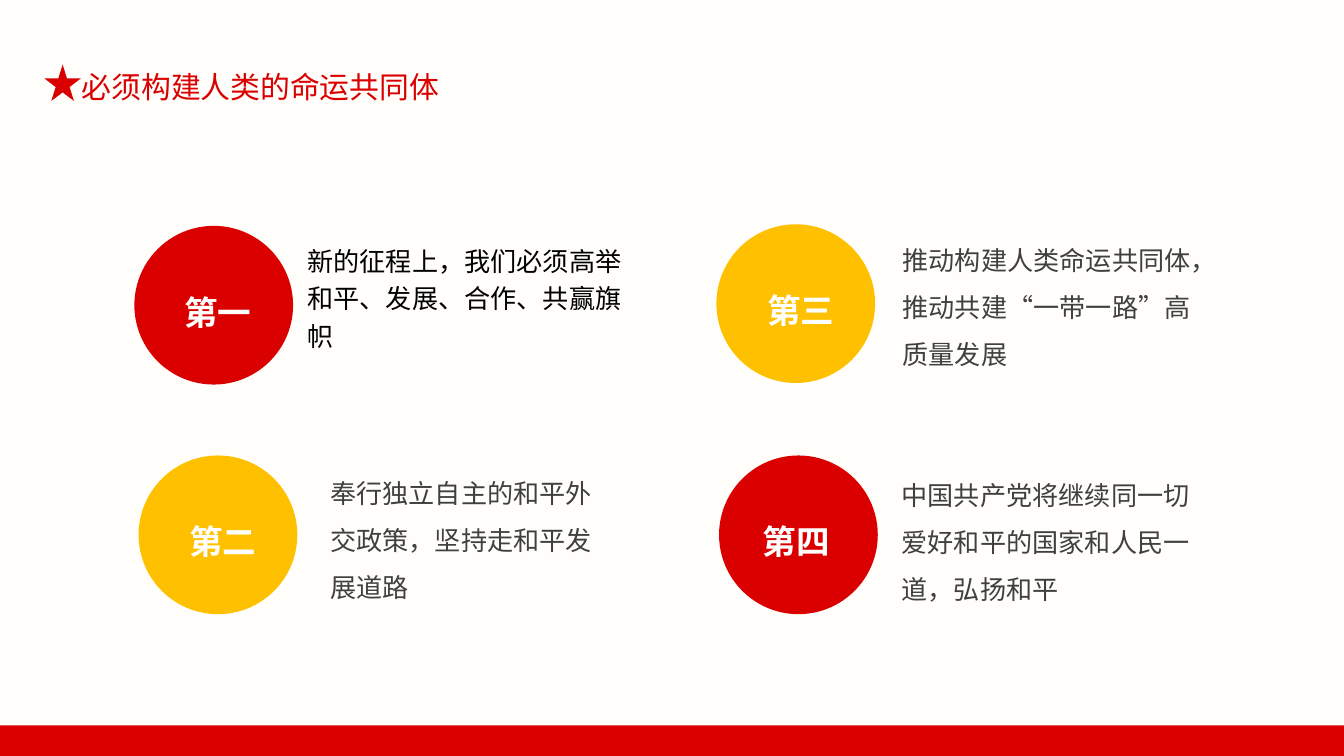
from pptx import Presentation
from pptx import util as u
from pptx.dml.color import RGBColor
from pptx.enum import shapes, text

COLORS = {
    "paper": "FFFEFB",
    "red": "DA0000",
    "gold": "FFC000",
    "black": "000000",
    "gray": "404040",
    "white": "FFFFFF",
}
W, H = 25.4, 14.29
CIRCLE = 3.0
LABEL_DROP, LABEL_W, LABEL_H = 1.12, 1.93, 0.89


class Deck:
    """Holds the style and the current slide; lengths are in centimetres."""

    font = "Calibri"

    def __init__(self):
        self.prs = Presentation()
        self.prs.slide_width, self.prs.slide_height = u.Cm(W), u.Cm(H)
        self.s = None

    def color(self, name):
        return RGBColor.from_string(COLORS[name])

    def slide(self, background):
        self.s = self.prs.slides.add_slide(self.prs.slide_layouts[6])
        fill = self.s.background.fill
        fill.solid()
        fill.fore_color.rgb = self.color(background)

    def shape(self, kind, box, color, parent=None):
        parent = parent or self.s
        sp = parent.shapes.add_shape(kind, *map(u.Cm, box))
        sp.shadow.inherit = False
        sp.fill.solid()
        sp.fill.fore_color.rgb = self.color(color)
        sp.line.fill.background()

    def text(self, content, box, size, color, bold=False, spacing=None,
             font=None, parent=None):
        parent = parent or self.s
        tf = parent.shapes.add_textbox(*map(u.Cm, box)).text_frame
        tf.word_wrap = True
        tf.vertical_anchor = text.MSO_ANCHOR.TOP
        p = tf.paragraphs[0]
        if spacing:
            p.line_spacing = spacing
        r = p.add_run()
        r.text = content
        r.font.name = font or self.font
        r.font.size = u.Pt(size)
        r.font.bold = bold
        r.font.color.rgb = self.color(color)

    def badge(self, label, left, top, label_dx, color):
        """A circle grouped with its ordinal."""
        grp = self.s.shapes.add_group_shape()
        self.shape(shapes.MSO_SHAPE.OVAL, (left, top, CIRCLE, CIRCLE), color, grp)
        self.text(label, (left + label_dx, top + LABEL_DROP, LABEL_W, LABEL_H),
                  18, "white", bold=True, parent=grp)


# label, circle left and top, label offset, circle colour
BADGES = [
    ("第一", 2.54, 4.27, 0.69, "red"),
    ("第二", 2.62, 8.61, 0.71, "gold"),
    ("第三", 13.54, 4.24, 0.71, "gold"),
    ("第四", 13.59, 8.61, 0.58, "red"),
]
# wording, box, colour, line spacing, font
POINTS = [
    ("新的征程上，我们必须高举和平、发展、合作、共赢旗帜",
     (5.56, 4.39, 6.65, 2.39), "black", 1.2, "Noto Sans CJK SC"),
    ("奉行独立自主的和平外交政策，坚持走和平发展道路",
     (5.99, 8.61, 5.79, 2.64), "gray", 1.5, None),
    ("推动构建人类命运共同体，推动共建“一带一路”高质量发展",
     (16.81, 4.19, 6.25, 2.64), "gray", 1.5, None),
    ("中国共产党将继续同一切爱好和平的国家和人民一道，弘扬和平",
     (16.79, 8.64, 6.43, 2.64), "gray", 1.5, None),
]


def main():
    deck = Deck()
    deck.slide("paper")
    deck.text("必须构建人类的命运共同体", (1.3, 1.17, 7.67, 0.94), 16, "red")
    deck.shape(shapes.MSO_SHAPE.RECTANGLE, (0, 13.71, W, H - 13.71), "red")
    deck.shape(shapes.MSO_SHAPE.STAR_5_POINT, (0.84, 1.22, 0.69, 0.69), "red")
    for content, box, color, spacing, font in POINTS:
        deck.text(content, box, 14, color, spacing=spacing, font=font)
    for badge in BADGES:
        deck.badge(*badge)
    deck.prs.save("out.pptx")


if __name__ == "__main__":
    main()
